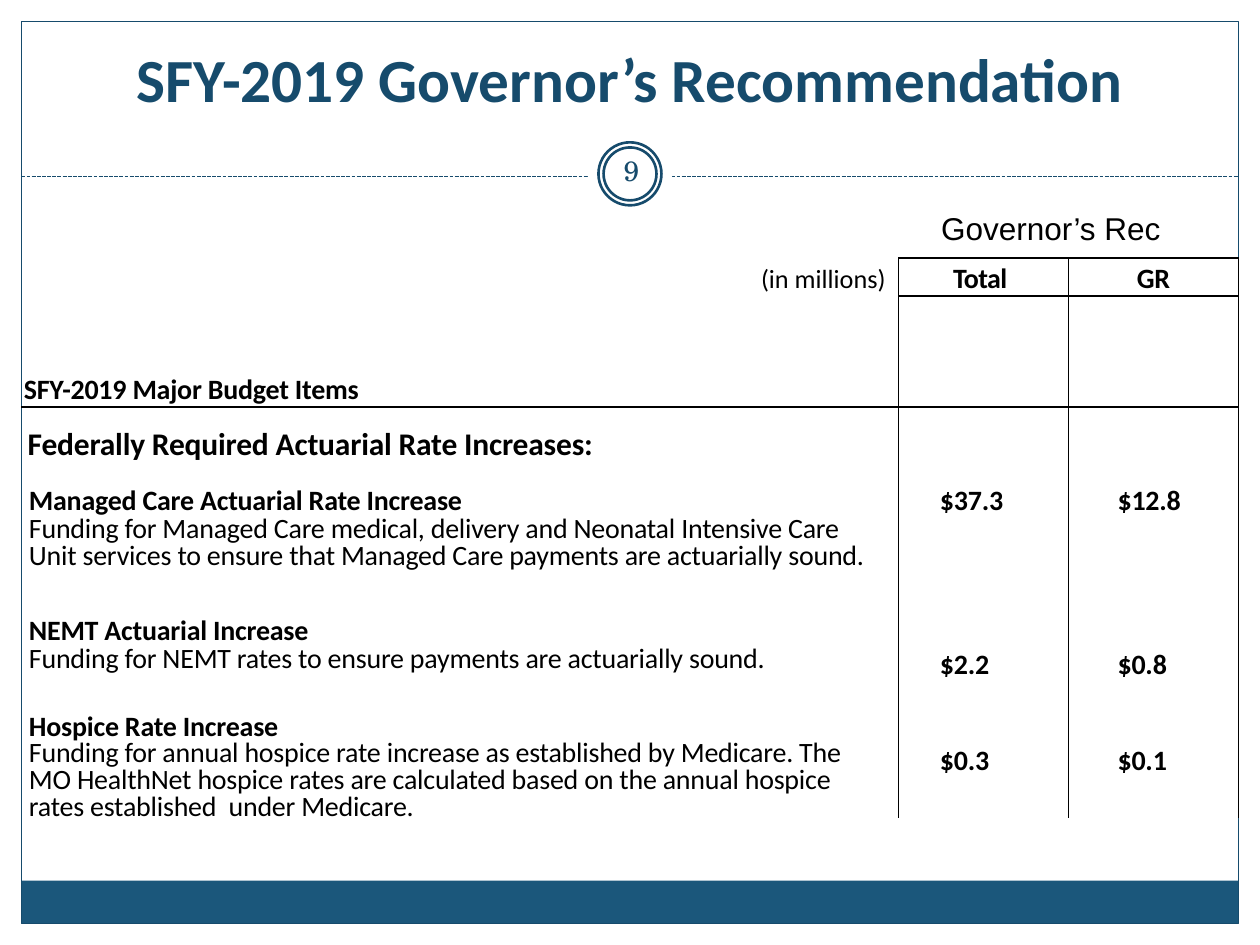
"""Build the SFY-2019 Governor's Recommendation budget slide."""
from pptx import Presentation
from pptx.dml.color import RGBColor
from pptx.enum.dml import MSO_LINE
from pptx.enum.shapes import MSO_CONNECTOR, MSO_SHAPE
from pptx.enum.text import PP_ALIGN
from pptx.oxml.ns import qn
from pptx.util import Inches, Pt
from lxml import etree

LEFT, CENTER = PP_ALIGN.LEFT, PP_ALIGN.CENTER
RECTANGLE, OVAL = MSO_SHAPE.RECTANGLE, MSO_SHAPE.OVAL
STRAIGHT, DASH = MSO_CONNECTOR.STRAIGHT, MSO_LINE.SQUARE_DOT
NAVY = RGBColor(0x16, 0x4B, 0x6C)
BLUE = RGBColor(0x1B, 0x57, 0x7B)
BLACK = RGBColor(0, 0, 0)
WHITE = RGBColor(255, 255, 255)

presentation = Presentation()
presentation.slide_width, presentation.slide_height = Inches(10), Inches(7.5)
slide = presentation.slides.add_slide(presentation.slide_layouts[6])
MARGIN, RIGHT = 0.17, 9.83
COLUMN_EDGES = [7.13, 8.48, 9.83]
TABLE_TOP, HEADER_BOTTOM, ITEMS_TOP, TABLE_BOTTOM = 2.05, 2.35, 3.23, 6.49


def add_text(text, left, top, width, height=0.27, size=16, bold=True, font="Calibri",
             color=BLACK, align=LEFT, spacing=-10, line_height=None, body=None):
    """Add a heading and an optional regular body paragraph."""
    box = slide.shapes.add_textbox(Inches(left), Inches(top), Inches(width), Inches(height))
    frame = box.text_frame
    frame.word_wrap = True
    frame.margin_left = frame.margin_right = frame.margin_top = frame.margin_bottom = 0
    paragraphs = [(text, bold, None if body else line_height)]
    if body:
        paragraphs.append((body, False, line_height))
    for index, (words, weight, leading) in enumerate(paragraphs):
        paragraph = frame.add_paragraph() if index else frame.paragraphs[0]
        paragraph.alignment = align
        if leading:
            paragraph.line_spacing = Pt(leading)
        run = paragraph.add_run()
        run.text = words
        run.font.name, run.font.size, run.font.bold = font, Pt(size), weight
        run.font.color.rgb = color
        run.font._element.set("spc", str(spacing))


def add_line(x1, y1, x2, y2, color=BLACK, width=1.0, dash=None):
    """Add a straight rule without a shadow."""
    line = slide.shapes.add_connector(STRAIGHT, Inches(x1), Inches(y1), Inches(x2), Inches(y2))
    line.line.color.rgb, line.line.width = color, Pt(width)
    if dash:
        line.line.dash_style = dash
    etree.SubElement(line._element.spPr, qn("a:effectLst"))


add_line(MARGIN, 1.4, RIGHT, 1.4, NAVY, 0.75, DASH)
BADGE_X, BADGE_Y = 5, 1.38
for kind, left, top, width, height, fill, outline, weight in [
    (RECTANGLE, MARGIN, 6.99, RIGHT - MARGIN, 0.34, BLUE, None, 0),
    (RECTANGLE, MARGIN, MARGIN, RIGHT - MARGIN, 7.16, None, NAVY, 0.75),
    *[(OVAL, BADGE_X - size / 2, BADGE_Y - size / 2, size, size, WHITE, outline, 1.5)
      for size, outline in [(0.67, None), (0.5, NAVY), (0.42, NAVY)]],
]:
    shape = slide.shapes.add_shape(kind, Inches(left), Inches(top), Inches(width), Inches(height))
    shape.shadow.inherit = False
    if fill is None:
        shape.fill.background()
    else:
        shape.fill.solid()
        shape.fill.fore_color.rgb = fill
    if outline is None:
        shape.line.fill.background()
    else:
        shape.line.color.rgb, shape.line.width = outline, Pt(weight)

add_text("SFY-2019 Governor’s Recommendation", 0.18, 0.33, 9.64, 0.59, size=35,
         color=NAVY, align=CENTER, spacing=0)
add_text("9", 4.95, 1.22, 0.15, bold=False, font="TeX Gyre Schola", color=NAVY)
add_text("(in millions)", 6.04, 2.08, 1.05, size=15, bold=False, spacing=0)
add_text("Governor’s Rec", 7.47, 1.66, 2.06, size=18, bold=False, font="Arial", spacing=0)
add_text("Total", 7.13, 2.07, 1.3, align=CENTER, spacing=-30)
add_text("GR", 8.48, 2.07, 1.35, align=CENTER)
add_text("SFY-2019 Major Budget Items", 0.19, 2.95, 2.9)
add_text("Federally Required Actuarial Rate Increases:", 0.22, 3.45, 4.72, size=18,
         line_height=15.3)

budget_items = [
    ("Managed Care Actuarial Rate Increase",
     "Funding for Managed Care medical, delivery and Neonatal Intensive Care Unit services to "
     "ensure that Managed Care payments are actuarially sound.",
     3.83, 6.82, 15.7, "$37.3", "$12.8", 3.83),
    ("NEMT Actuarial Increase",
     "Funding for NEMT rates to ensure payments are actuarially sound.",
     4.86, 6.55, 16.2, "$2.2", "$0.8", 5.13),
    ("Hospice Rate Increase",
     "Funding for annual hospice rate increase as established by Medicare. The MO HealthNet "
     "hospice rates are calculated based on the annual hospice rates established  under Medicare.",
     5.62, 6.55, 15.3, "$0.3", "$0.1", 5.89),
]
for heading, body, top, width, leading, total, general_revenue, amount_top in budget_items:
    add_text(heading, 0.23, top, width, 0.72, line_height=leading, body=body)
    add_text(total, 7.46, amount_top, 0.65)
    add_text(general_revenue, 8.87, amount_top, 0.65)

for x in COLUMN_EDGES:
    add_line(x, TABLE_TOP, x, TABLE_BOTTOM)
for start, y in [(COLUMN_EDGES[0], TABLE_TOP), (COLUMN_EDGES[0], HEADER_BOTTOM),
                 (MARGIN, ITEMS_TOP)]:
    add_line(start, y, RIGHT, y)

presentation.save("out.pptx")
